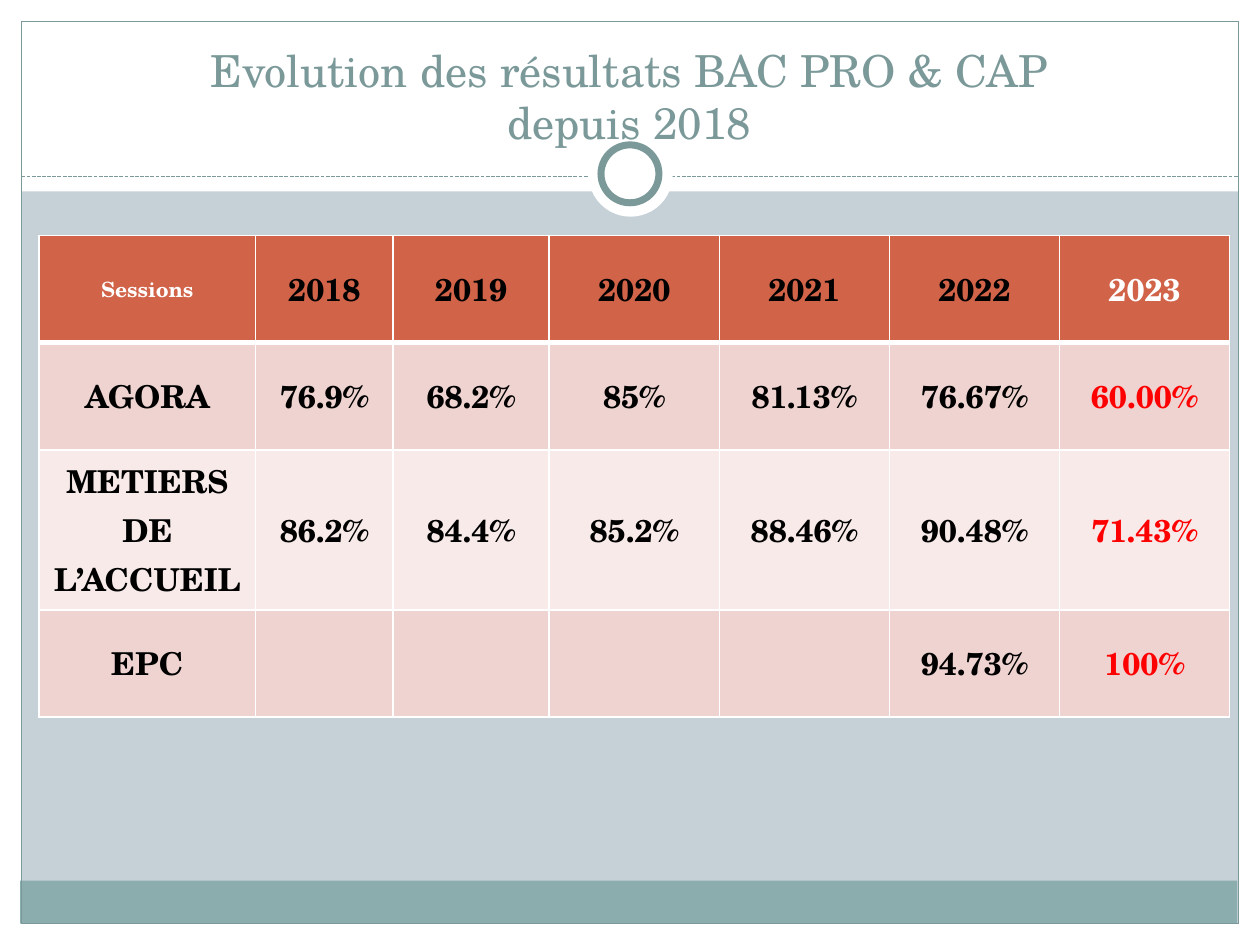
from pptx import Presentation
from pptx.dml.color import RGBColor
from pptx.enum.dml import MSO_LINE
from pptx.enum.shapes import MSO_CONNECTOR, MSO_SHAPE
from pptx.enum.text import MSO_ANCHOR, PP_ALIGN
from pptx.oxml.ns import qn
from pptx.util import Inches, Pt
from lxml.etree import SubElement

FONT = "TeX Gyre Schola"
WHITE, BLACK, RED = "FFFFFF", "000000", "FF0000"
TEAL, SAGE, MIST = "7C999A", "8CADAE", "C5D1D7"
BRICK, ROSE, PALE = "D16349", "EED3D0", "F7EAE9"


def rgb(value):
    return RGBColor.from_string(value)


class SlideBuilder:
    def __init__(self, slide, font):
        self.slide = slide
        self.font = font

    def background(self, color):
        fill = self.slide.background.fill
        fill.solid()
        fill.fore_color.rgb = rgb(color)

    def shape(self, kind, box, fill=None, line=None, width=0.75):
        sp = self.slide.shapes.add_shape(kind, *map(Inches, box))
        sp.shadow.inherit = False
        if fill:
            sp.fill.solid()
            sp.fill.fore_color.rgb = rgb(fill)
        else:
            sp.fill.background()
        if line:
            sp.line.color.rgb = rgb(line)
            sp.line.width = Pt(width)
        else:
            sp.line.fill.background()

    def dashed_line(self, x1, y1, x2, y2, color):
        line = self.slide.shapes.add_connector(
            MSO_CONNECTOR.STRAIGHT, *map(Inches, (x1, y1, x2, y2)))
        line.line.color.rgb = rgb(color)
        line.line.width = Pt(0.75)
        line.line.dash_style = MSO_LINE.SQUARE_DOT
        SubElement(line._element.spPr, qn("a:effectLst"))

    def style(self, p, size, color, bold=False):
        p.alignment = PP_ALIGN.CENTER
        p.font.name = self.font
        p.font.size = Pt(size)
        p.font.bold = bold
        p.font.color.rgb = rgb(color)

    def text(self, box, text, size, color):
        tf = self.slide.shapes.add_textbox(*map(Inches, box)).text_frame
        tf.word_wrap = True
        tf.vertical_anchor = MSO_ANCHOR.BOTTOM
        p = tf.paragraphs[0]
        p.text = text
        self.style(p, size, color)

    def borders(self, cell, color, bottom):
        tc_pr = cell._tc.get_or_add_tcPr()
        widths = {"lnL": 1, "lnR": 1, "lnT": 1, "lnB": bottom}
        # Borders come before the fill in the cell properties
        for i, (tag, width) in enumerate(widths.items()):
            ln = SubElement(tc_pr, qn(f"a:{tag}"), w=str(Pt(width)))
            fill = SubElement(ln, qn("a:solidFill"))
            SubElement(fill, qn("a:srgbClr"), val=color)
            tc_pr.insert(i, ln)

    def table(self, left, top, widths, heights, rows, look):
        size = Inches(sum(widths)), Inches(sum(heights))
        table = self.slide.shapes.add_table(
            len(rows), len(widths), Inches(left), Inches(top), *size).table
        for column, width in zip(table.columns, widths):
            column.width = Inches(width)
        for r, (row, height) in enumerate(zip(rows, heights)):
            table.rows[r].height = Inches(height)
            for c, value in enumerate(row):
                cell = table.cell(r, c)
                fill, color, points, bottom = look(r, c)
                cell.vertical_anchor = MSO_ANCHOR.MIDDLE
                cell.fill.solid()
                cell.fill.fore_color.rgb = rgb(fill)
                self.borders(cell, WHITE, bottom)
                p = cell.text_frame.paragraphs[0]
                p.text = value
                self.style(p, points, color, bold=True)


def results_look(r, c):
    """Fill, text colour, text size and bottom border of a cell."""
    if r == 0:
        color = WHITE if c in (0, 6) else BLACK
        return BRICK, color, 12 if c == 0 else 18, 3
    return ROSE if r % 2 else PALE, RED if c == 6 else BLACK, 18, 1


def main():
    prs = Presentation()
    prs.slide_width, prs.slide_height = Inches(10), Inches(7.5)
    s = SlideBuilder(prs.slides.add_slide(prs.slide_layouts[6]), FONT)

    # Page margins, footer band and frame
    s.background(MIST)
    for box in ((0, 7.33, 10, 0.17), (0, 0, 10, 1.52),
                (0, 0, 0.17, 7.5), (9.83, 0, 0.17, 7.5)):
        s.shape(MSO_SHAPE.RECTANGLE, box, WHITE)
    s.shape(MSO_SHAPE.RECTANGLE, (0.16, 6.99, 9.66, 0.34), SAGE)
    s.shape(MSO_SHAPE.RECTANGLE, (0.17, 0.17, 9.66, 7.16), line=TEAL)

    # Divider with its ring
    s.dashed_line(0.17, 1.4, 9.83, 1.4, TEAL)
    s.shape(MSO_SHAPE.OVAL, (4.67, 1.05, 0.67, 0.67), WHITE)
    s.shape(MSO_SHAPE.OVAL, (4.77, 1.15, 0.46, 0.46), WHITE, TEAL, 4)

    # Title
    s.text((0.33, 0.25, 9.33, 0.98),
           "Evolution des résultats BAC PRO & CAP\vdepuis 2018", 25.2, TEAL)

    # Results by session
    rows = [
        ["Sessions", "2018", "2019", "2020", "2021", "2022", "2023"],
        ["AGORA", "76.9%", "68.2%", "85%", "81.13%", "76.67%", "60.00%"],
        ["METIERS DE L’ACCUEIL", "86.2%", "84.4%", "85.2%", "88.46%",
         "90.48%", "71.43%"],
        ["EPC", "", "", "", "", "94.73%", "100%"],
    ]
    s.table(0.31, 1.87, [1.72, 1.09, 1.24] + [1.35] * 4,
            [0.85, 0.85, 1.27, 0.85], rows, results_look)

    prs.save("out.pptx")


if __name__ == "__main__":
    main()
